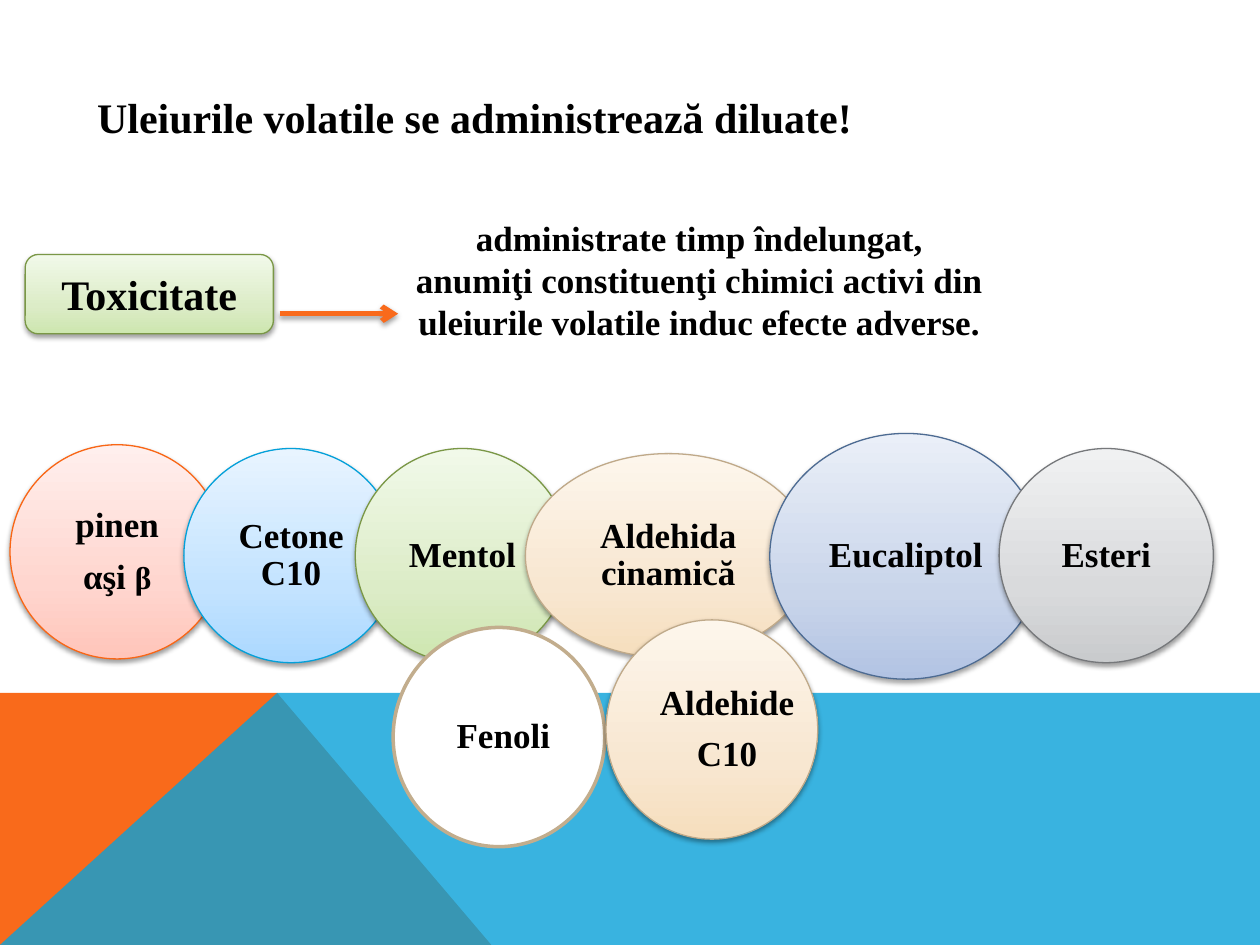
"""Build a slide on the toxicity of volatile oils and their constituents."""
import copy
import pptx
import pptx.util
import pptx.dml.color
import pptx.enum.shapes
import pptx.enum.text
import pptx.oxml
import pptx.oxml.ns

Pt = pptx.util.Pt
RGB = pptx.dml.color.RGBColor
Kind = pptx.enum.shapes.MSO_SHAPE
Align = pptx.enum.text.PP_ALIGN
Anchor = pptx.enum.text.MSO_ANCHOR
qn = pptx.oxml.ns.qn

BLACK = RGB(0, 0, 0)
WHITE = RGB(255, 255, 255)
ORANGE = RGB(0xF9, 0x6A, 0x1B)
BLUE = RGB(0x08, 0xA1, 0xD9)
TAN = RGB(0xC2, 0xAD, 0x8D)
RED_SET = [RGB(0xFF, 0xC5, 0xBA), RGB(0xFF, 0xD6, 0xCF), RGB(0xFF, 0xEF, 0xED), RGB(0xF9, 0x66, 0x15)]
SKY_SET = [RGB(0xAB, 0xD8, 0xFF), RGB(0xC3, 0xE3, 0xFF), RGB(0xE8, 0xF4, 0xFF), RGB(0x03, 0xA0, 0xD9)]
GREEN_SET = [RGB(0xCD, 0xE6, 0xAF), RGB(0xDC, 0xEC, 0xC7), RGB(0xF1, 0xF9, 0xE9), RGB(0x7A, 0x97, 0x46)]
SAND_SET = [RGB(0xF6, 0xDE, 0xBD), RGB(0xF8, 0xE7, 0xD1), RGB(0xFD, 0xF6, 0xEC), RGB(0xBF, 0xA9, 0x89)]
NAVY_SET = [RGB(0xB2, 0xC3, 0xE3), RGB(0xC9, 0xD5, 0xEA), RGB(0xEA, 0xEF, 0xF8), RGB(0x4D, 0x6B, 0x92)]
GREY_SET = [RGB(0xC9, 0xCB, 0xCD), RGB(0xD9, 0xDA, 0xDC), RGB(0xF0, 0xF1, 0xF2), RGB(0x76, 0x78, 0x7B)]
NS = 'xmlns:a="http://schemas.openxmlformats.org/drawingml/2006/main"'
SHADE = (f'<a:effectLst {NS}><a:outerShdw blurRad="39400" dist="20300" dir="5400000" '
         'rotWithShape="0"><a:srgbClr val="000000"><a:alpha val="38000"/></a:srgbClr>'
         '</a:outerShdw></a:effectLst>')

deck = pptx.Presentation()
deck.slide_width, deck.slide_height = pptx.util.Inches(10), pptx.util.Inches(7.5)
col, row = deck.slide_width / 100, deck.slide_height / 75
slide = deck.slides.add_slide(deck.slide_layouts[5])
shapes = slide.shapes


def grid(x, y, w, h):
    """Turn columns and rows into lengths."""
    return [round(n * unit) for n, unit in zip((x, y, w, h), (col, row, col, row))]


def write(shape, lines, size, align=Align.CENTER):
    """Fill a shape with bold black lines."""
    frame = shape.text_frame
    frame.word_wrap = True
    for i, line in enumerate(lines):
        par = frame.paragraphs[0] if i == 0 else frame.add_paragraph()
        head, _, tail = line.partition("|")
        par.add_run().text = head
        par.alignment = align
        font = par.font
        font.name, font.size, font.bold = "Times New Roman", Pt(size), True
        font.color.rgb = BLACK
        if tail:
            run = par.add_run()
            run.text, run.font.size = tail, Pt(18)
    return frame


title = shapes.title
title.left, title.top, title.width, title.height = grid(6.7, 6.8, 63.3, 5)
frame = write(title, ["Uleiurile volatile se administrează diluate!"], 24, Align.LEFT)
frame.vertical_anchor, frame.word_wrap = Anchor.TOP, False

bands = [
    (ORANGE, [(0, 75), (0, 55.2), (22.3, 55.2), (39.1, 75)]),
    (BLUE, [(0, 75), (22.3, 55.2), (100, 55.3), (100, 75)]),
]
for color, spots in bands:
    path = shapes.build_freeform(*spots[0], scale=(col, row))
    path.add_line_segments(spots[1:], close=True)
    band = path.convert_to_shape()
    band.fill.solid()
    band.fill.fore_color.rgb = color
    band.line.fill.background()
    band.shadow.inherit = False
    if color == BLUE:
        tint = band._element.spPr.find(".//" + qn("a:srgbClr"))
        tint.append(pptx.oxml.parse_xml(f'<a:alpha {NS} val="80000"/>'))

note = shapes.add_textbox(*grid(31.9, 16.7, 47.2, 11.1))
write(note, ["administrate timp îndelungat, anumiţi constituenţi chimici activi din "
             "uleiurile volatile induc efecte adverse."], 20)

x, y, end, _ = grid(22.2, 24.9, 31.6, 0)
arrow = shapes.add_connector(pptx.enum.shapes.MSO_CONNECTOR.STRAIGHT, x, y, end, y)
arrow.line.color.rgb, arrow.line.width = ORANGE, Pt(3)
arrow.line._get_or_add_ln().append(pptx.oxml.parse_xml(f'<a:tailEnd {NS} type="arrow"/>'))
arrow._element.spPr.append(pptx.oxml.parse_xml(SHADE))

items = [
    (Kind.ROUNDED_RECTANGLE, (2, 20.2, 19.7, 6.3), GREEN_SET, ["Toxicitate"], 0),
    (Kind.OVAL, (0.8, 35.3, 17, 17), RED_SET, ["pinen", "αşi |β"], 0),
    (Kind.OVAL, (14.6, 35.6, 17, 17), SKY_SET, ["Cetone C10"], 0),
    (Kind.OVAL, (28.2, 35.6, 17, 17), GREEN_SET, ["Mentol"], 0),
    (Kind.OVAL, (41.7, 36, 22.7, 16.2), SAND_SET, ["Aldehida cinamică"], 0),
    (Kind.OVAL, (61.1, 34.4, 21.6, 19.5), NAVY_SET, ["Eucaliptol"], 0),
    (Kind.OVAL, (79.3, 35.6, 17, 17), GREY_SET, ["Esteri"], 0),
    (Kind.OVAL, (31.2, 49.8, 16.8, 17.4), None, ["Fenoli"], 0.7),
    (Kind.OVAL, (48.1, 49.2, 16.8, 17.4), SAND_SET, ["Aldehide", "C10"], 2.4),
]
inset = (1 - 0.5 ** 0.5) / 2
for kind, area, tints, lines, extra in items:
    shape = shapes.add_shape(kind, *grid(*area))
    shape.shadow.inherit = False
    if tints:
        shape.fill.gradient()
        shape.fill.gradient_angle = 90
        first = shape.fill.gradient_stops[0]._gs
        first.addnext(copy.deepcopy(first))
        for stop, tint, pos in zip(shape.fill.gradient_stops, tints, (0, 0.35, 1)):
            stop.color.rgb, stop.position = tint, pos
        shape.line.color.rgb, shape.line.width = tints[3], Pt(0.75)
        props = shape._element.spPr
        props.replace(props.find(qn("a:effectLst")), pptx.oxml.parse_xml(SHADE))
    else:
        shape.fill.solid()
        shape.fill.fore_color.rgb = WHITE
        shape.line.color.rgb, shape.line.width = TAN, Pt(2)
    if kind == Kind.ROUNDED_RECTANGLE:
        write(shape, lines, 24)
        continue
    x, y, w, h = area
    share = 1 - 2 * inset
    label = shapes.add_textbox(*grid(x + inset * w, y + inset * h, share * w + extra, share * h))
    frame = write(label, lines, 20)
    frame.vertical_anchor = Anchor.MIDDLE
    frame.margin_left = frame.margin_right = round(0.9 * col)
    frame.margin_top = frame.margin_bottom = round(0.3 * row)
    for par in frame.paragraphs:
        par.line_spacing, par.space_after = 0.9, Pt(8)

deck.save("out.pptx")
